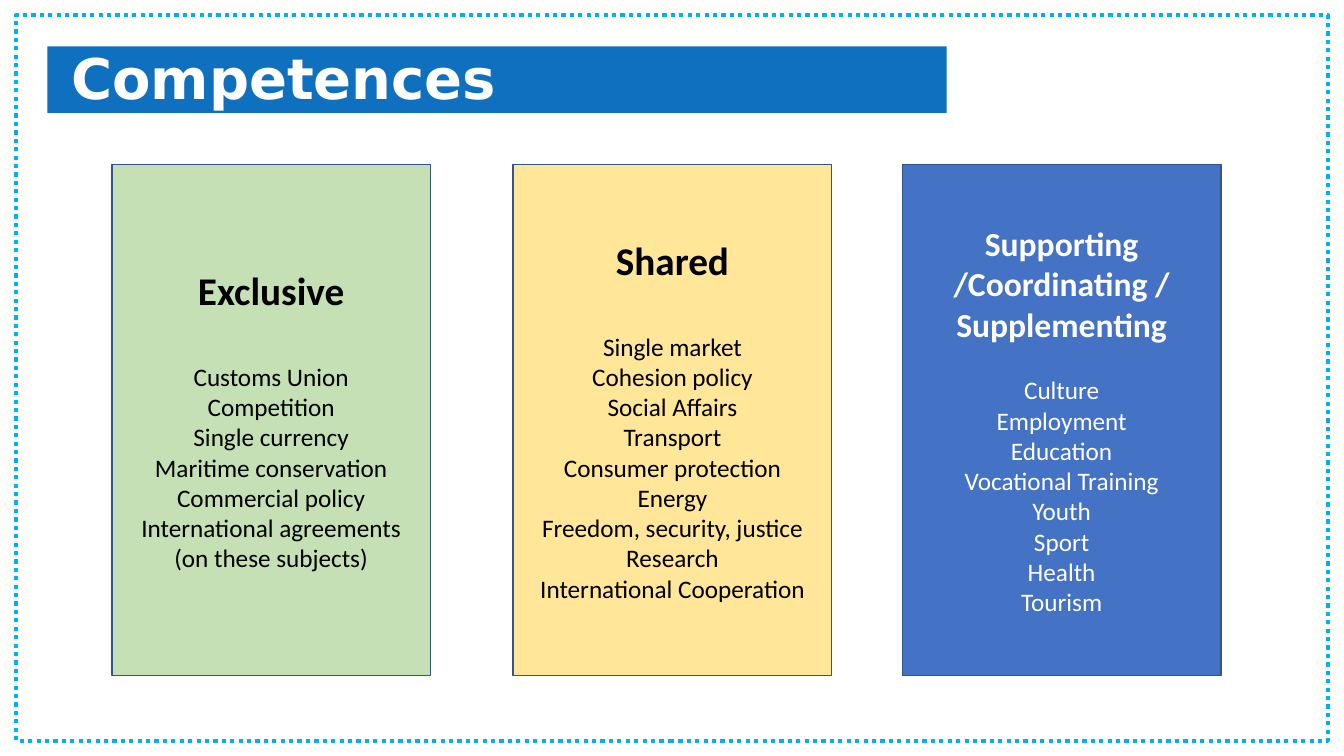
from pptx import Presentation
from pptx.dml.color import RGBColor
from pptx.enum import dml, shapes, text
from pptx.util import Inches, Pt

# Content
TITLE = "Competences"
# heading, heading size, gap below it, fill, text colour, left edge, subjects
CARDS = [
    ("Exclusive", 28, 34, "C5E0B4", "000000", 1.11,
     ["Customs Union", "Competition", "Single currency", "Maritime conservation",
      "Commercial policy", "International agreements (on these subjects)"]),
    ("Shared", 28, 34, "FFE699", "000000", 5.09,
     ["Single market", "Cohesion policy", "Social Affairs", "Transport",
      "Consumer protection", "Energy", "Freedom, security, justice", "Research",
      "International Cooperation"]),
    ("Supporting /Coordinating / Supplementing", 24, 22, "4472C4", "FFFFFF", 8.95,
     ["Culture", "Employment", "Education", "Vocational Training", "Youth", "Sport",
      "Health", "Tourism"]),
]
CARD_TOP, CARD_WIDTH, CARD_HEIGHT = 1.63, 3.16, 5.07


def colour(value):
    return RGBColor.from_string(value)


def add_box(page, left, top, width, height, fill=None, line=None, weight=1):
    box = page.shapes.add_shape(shapes.MSO_SHAPE.RECTANGLE, Inches(left), Inches(top),
                                Inches(width), Inches(height))
    box.shadow.inherit = False
    if fill:
        box.fill.solid()
        box.fill.fore_color.rgb = colour(fill)
    else:
        box.fill.background()
    if line:
        box.line.color.rgb = colour(line)
        box.line.width = Pt(weight)
    else:
        box.line.fill.background()
    return box


def write(para, words, size, ink, font="Calibri", bold=False,
          align=text.PP_ALIGN.CENTER, after=0, spacing=1.0):
    para.alignment = align
    para.space_after = Pt(after)
    para.line_spacing = spacing
    span = para.add_run()
    span.text = words
    span.font.name = font
    span.font.size = Pt(size)
    span.font.bold = bold
    span.font.color.rgb = colour(ink)


def prepare_frame(box):
    frame = box.text_frame
    frame.word_wrap = True
    frame.vertical_anchor = text.MSO_ANCHOR.MIDDLE
    return frame


deck = Presentation()
deck.slide_width, deck.slide_height = Inches(13.33), Inches(7.5)
page = deck.slides.add_slide(deck.slide_layouts[6])

# Dotted border
border = add_box(page, 0.16, 0.15, 13.01, 7.2, line="00B0F0", weight=3)
border.line.dash_style = dml.MSO_LINE.ROUND_DOT

# Title on its band
add_box(page, 0.47, 0.46, 8.92, 0.66, fill="1070C0")
title = page.shapes.add_textbox(Inches(0.61), Inches(0.42), Inches(11.5), Inches(0.77))
write(prepare_frame(title).paragraphs[0], TITLE, 40, "FFFFFF", font="DejaVu Sans",
      bold=True, align=text.PP_ALIGN.LEFT, spacing=0.9)

# Competence cards
for heading, size, gap, fill, ink, left, subjects in CARDS:
    card = add_box(page, left, CARD_TOP, CARD_WIDTH, CARD_HEIGHT, fill, "325491")
    frame = prepare_frame(card)
    write(frame.paragraphs[0], heading, size, ink, bold=True, after=gap)
    for subject in subjects:
        write(frame.add_paragraph(), subject, 18, ink)

deck.save("out.pptx")
